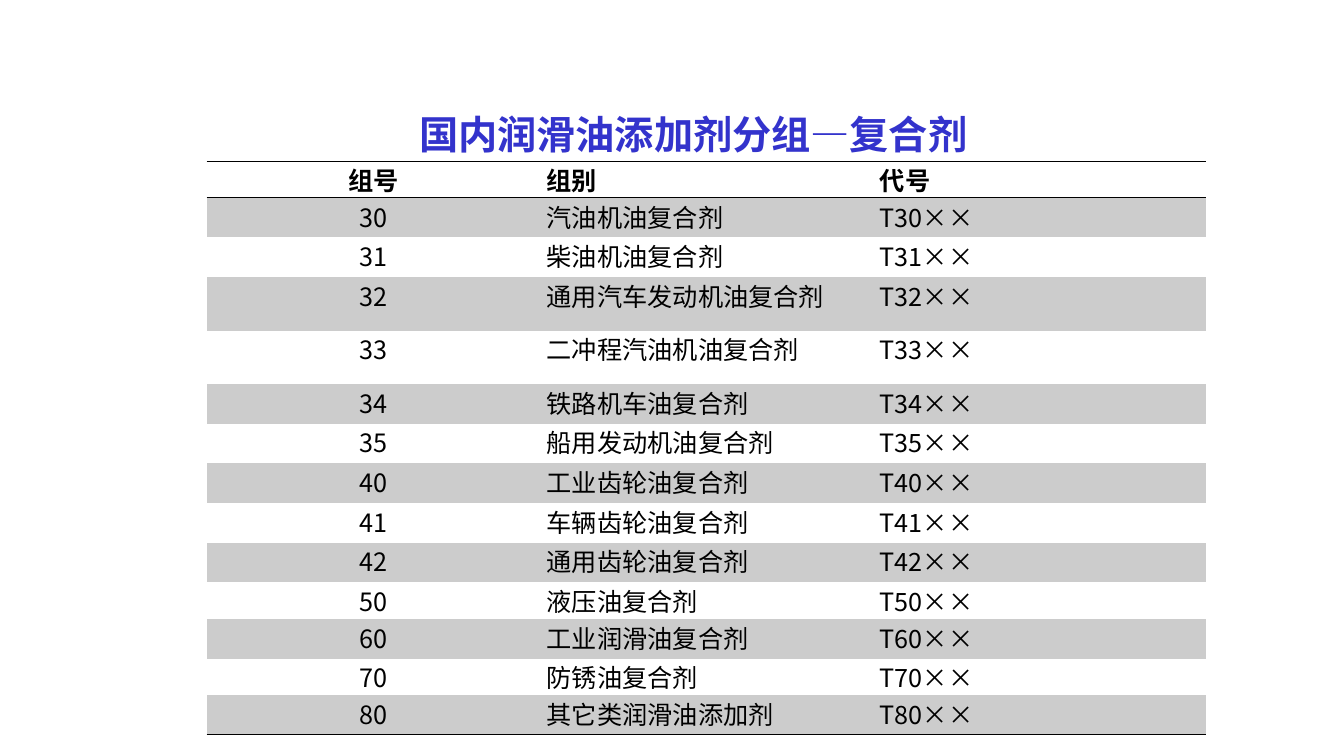
from lxml.etree import SubElement
from pptx import Presentation
from pptx.dml.color import RGBColor
from pptx.enum.text import MSO_ANCHOR, PP_ALIGN
from pptx.oxml.ns import qn
from pptx.util import Inches, Pt

FONT = "Noto Sans CJK SC"
BLUE = RGBColor(0x33, 0x33, 0xCC)
BLACK = RGBColor(0, 0, 0)
GREY = RGBColor(0xCC, 0xCC, 0xCC)
PLAIN_TABLE_STYLE = "{2D5ABB26-0587-4C30-8999-92F81FD0307C}"

TITLE = "国内润滑油添加剂分组—复合剂"
HEADER = ("组号", "组别", "代号")
GROUPS = [
    ("30", "汽油机油复合剂"),
    ("31", "柴油机油复合剂"),
    ("32", "通用汽车发动机油复合剂"),
    ("33", "二冲程汽油机油复合剂"),
    ("34", "铁路机车油复合剂"),
    ("35", "船用发动机油复合剂"),
    ("40", "工业齿轮油复合剂"),
    ("41", "车辆齿轮油复合剂"),
    ("42", "通用齿轮油复合剂"),
    ("50", "液压油复合剂"),
    ("60", "工业润滑油复合剂"),
    ("70", "防锈油复合剂"),
    ("80", "其它类润滑油添加剂"),
]
ROW_HEIGHT = 0.394
SPECIAL_HEIGHTS = {"组号": 0.315, "32": 0.53, "33": 0.53, "50": 0.315, "70": 0.315}


def style_paragraph(para, size, color, bold, align):
    para.alignment = align
    font = para.font
    font.name, font.size, font.bold = FONT, Pt(size), bold
    font.color.rgb = color
    east_asian = SubElement(para._p.pPr.find(qn("a:defRPr")), qn("a:ea"))
    east_asian.set("typeface", FONT)


def add_border(cell, side):
    """Draw a 1 pt black line on one side: lnT or lnB. Call before setting the fill."""
    line = SubElement(cell._tc.get_or_add_tcPr(), qn("a:" + side), w=str(Pt(1)))
    fill = SubElement(line, qn("a:solidFill"))
    SubElement(fill, qn("a:srgbClr"), val=str(BLACK))


def place_title(page, left, top, width, height):
    title = page.shapes.title
    title.left, title.top, title.width, title.height = left, top, width, height
    frame = title.text_frame
    frame.text = TITLE
    frame.word_wrap = True
    frame.vertical_anchor = MSO_ANCHOR.MIDDLE
    style_paragraph(frame.paragraphs[0], 28, BLUE, True, PP_ALIGN.CENTER)


def fill_cell(cell, text, is_header, is_centred):
    cell.margin_left = cell.margin_right = Inches(0.07)
    cell.margin_top = cell.margin_bottom = 0
    cell.text = text
    align = PP_ALIGN.CENTER if is_centred else PP_ALIGN.JUSTIFY
    style_paragraph(cell.text_frame.paragraphs[0], 18, BLACK, is_header, align)


def add_group_table(page, left, top, width):
    rows = [HEADER] + [(number, name, f"T{number}××") for number, name in GROUPS]
    heights = [Inches(SPECIAL_HEIGHTS.get(row[0], ROW_HEIGHT)) for row in rows]
    frame = page.shapes.add_table(len(rows), len(HEADER), left, top, width, sum(heights))
    table = frame.table
    table.first_row = table.horz_banding = False
    table._tbl.tblPr.find(qn("a:tableStyleId")).text = PLAIN_TABLE_STYLE
    for index, (row, height) in enumerate(zip(rows, heights)):
        table.rows[index].height = height
        for column, text in enumerate(row):
            cell = table.cell(index, column)
            fill_cell(cell, text, index == 0, column == 0)
            if index == 0:
                add_border(cell, "lnT")
            if index in (0, len(rows) - 1):
                add_border(cell, "lnB")
            if index % 2:
                cell.fill.solid()
                cell.fill.fore_color.rgb = GREY
            else:
                cell.fill.background()


def main():
    deck = Presentation()
    deck.slide_width, deck.slide_height = Inches(13.33), Inches(7.5)
    page = deck.slides.add_slide(deck.slide_layouts.get_by_name("Title Only"))
    place_title(page, Inches(2.32), Inches(0.91), Inches(9.11), Inches(0.84))
    add_group_table(page, Inches(2.05), Inches(1.6), Inches(9.91))
    deck.save("out.pptx")


if __name__ == "__main__":
    main()
